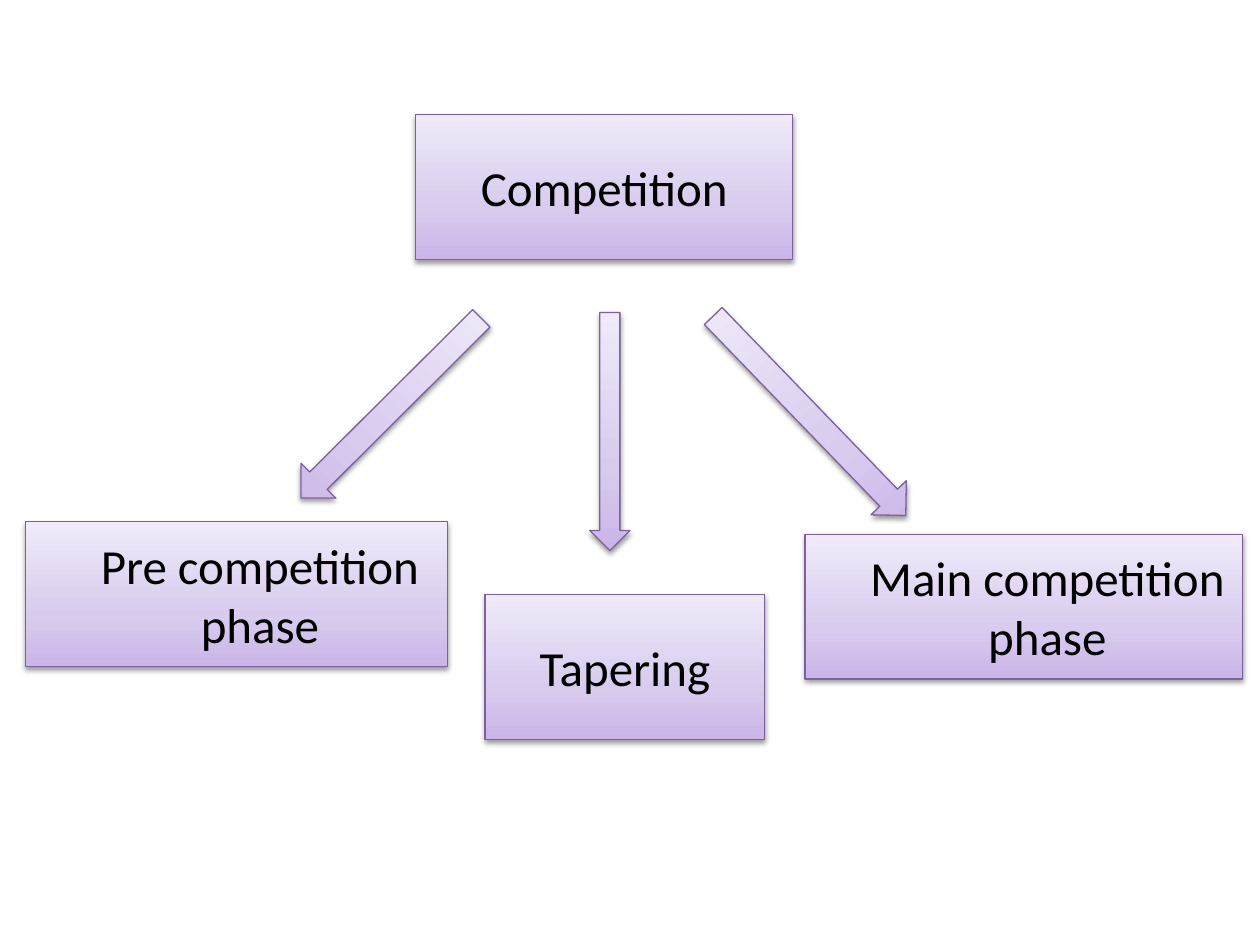
from typing import NamedTuple

from lxml.etree import SubElement
from pptx import Presentation
from pptx.dml.color import RGBColor
from pptx.enum.shapes import MSO_SHAPE as Kind
from pptx.enum.text import MSO_ANCHOR as Anchor, PP_ALIGN as Align
from pptx.oxml.ns import qn
from pptx.util import Emu, Inches, Pt

COLS, ROWS = 100, 75
CELL = Inches(10) // COLS
HIGH = 11.5
STOPS = ((0, "C9B5E8"), (35, "D8CBEE"), (100, "F0EAF9"))
EDGE, INK, SHADE = "7D60A0", "000000", "000000"


class Box(NamedTuple):
    text: str
    col: float
    row: float
    wide: float
    indent: float = 0


class Arrow(NamedTuple):
    col: float
    row: float
    wide: float
    high: float
    turn: float = 0


BOXES = (
    Box("Competition", 33, 9.1, 29.9),
    Box("Pre competition phase", 2, 41.4, 33.5, 3.75),
    Box("Tapering", 38.5, 47.2, 22.2),
    Box("Main competition phase", 63.9, 42.4, 34.7, 3.75),
)
ARROWS = (
    Arrow(29.1, 22.3, 3.9, 20.2, 45.1),
    Arrow(46.8, 24.8, 3.2, 18.9),
    Arrow(62.3, 22, 3.9, 22, 316),
)


def span(cells: float) -> Emu:
    return Emu(round(cells * CELL))


def paint(code: str) -> RGBColor:
    return RGBColor.from_string(code)


def tint(parent, code: str):
    """Add a plain colour element to a gradient stop or shadow."""
    return SubElement(parent, qn("a:srgbClr"), val=code)


def add_shape(slide, kind: Kind, col: float, row: float, wide: float, high: float):
    """Add a lilac gradient shape with a thin edge and a soft shadow."""
    shape = slide.shapes.add_shape(kind, *map(span, (col, row, wide, high)))
    shape.fill.gradient()
    shape.fill.gradient_angle = 90
    stops = shape._element.spPr.find(f".//{qn('a:gsLst')}")
    for old in list(stops):
        stops.remove(old)
    for share, code in STOPS:
        tint(SubElement(stops, qn("a:gs"), pos=str(share * 1000)), code)
    shape.line.color.rgb = paint(EDGE)
    shape.line.width = Pt(0.75)
    shape.shadow.inherit = False
    effects = shape._element.spPr.find(qn("a:effectLst"))
    shadow = SubElement(effects, qn("a:outerShdw"), blurRad=str(Pt(3.1)),
                        dist=str(Pt(1.6)), dir="5400000", rotWithShape="0")
    SubElement(tint(shadow, SHADE), qn("a:alpha"), val="38000")
    return shape


def add_box(slide, box: Box) -> None:
    shape = add_shape(slide, Kind.RECTANGLE, box.col, box.row, box.wide, HIGH)
    frame = shape.text_frame
    frame.word_wrap = True
    frame.vertical_anchor = Anchor.MIDDLE
    para = frame.paragraphs[0]
    para.alignment = Align.CENTER
    if box.indent:
        props = para._p.get_or_add_pPr()
        props.set("marL", str(span(box.indent)))
        props.set("indent", "0")
    run = para.add_run()
    run.text = box.text
    run.font.name = "Calibri"
    run.font.size = Pt(28)
    run.font.color.rgb = paint(INK)


def add_arrow(slide, arrow: Arrow) -> None:
    shape = add_shape(slide, Kind.DOWN_ARROW, *arrow[:4])
    shape.rotation = arrow.turn


def main() -> None:
    deck = Presentation()
    deck.slide_width, deck.slide_height = span(COLS), span(ROWS)
    slide = deck.slides.add_slide(deck.slide_layouts.get_by_name("Blank"))
    for box in BOXES:
        add_box(slide, box)
    for arrow in ARROWS:
        add_arrow(slide, arrow)
    deck.save("out.pptx")


if __name__ == "__main__":
    main()
